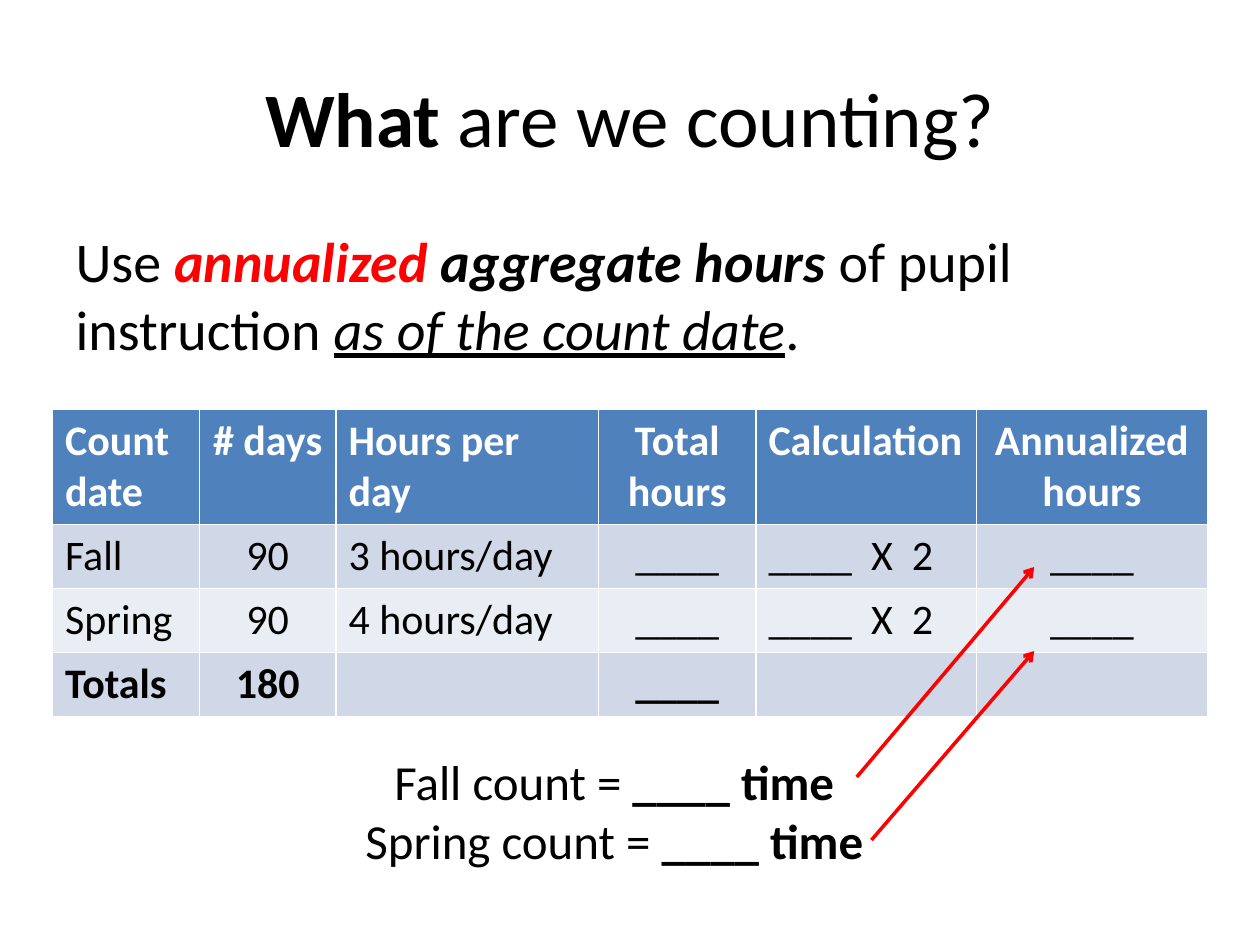
import pptx
import pptx.util
import pptx.dml.color
import pptx.enum.shapes
import pptx.enum.text
import pptx.oxml

Pt = pptx.util.Pt
RGBColor = pptx.dml.color.RGBColor
CENTER = pptx.enum.text.PP_ALIGN.CENTER
LEFT = pptx.enum.text.PP_ALIGN.LEFT

BLACK = RGBColor(0x00, 0x00, 0x00)
WHITE = RGBColor(0xFF, 0xFF, 0xFF)
RED = RGBColor(0xFF, 0x00, 0x00)
HEADER_BLUE = RGBColor(0x4F, 0x81, 0xBD)
BAND_DARK = RGBColor(0xD0, 0xD8, 0xE8)
BAND_LIGHT = RGBColor(0xE9, 0xED, 0xF4)

NAMESPACE = 'xmlns:a="http://schemas.openxmlformats.org/drawingml/2006/main"'
BLANK = "____"
COLUMN_WIDTHS = [84, 78, 150, 90, 126, 132]
COLUMN_ALIGNS = [LEFT, CENTER, LEFT, CENTER, LEFT, CENTER]
ROW_HEIGHTS = [65.5, 36.5, 36.5, 36.5]
COUNT_ROWS = [
    ["Count date", "# days", "Hours per day", "Total hours", "Calculation", "Annualized hours"],
    ["Fall", "90", "3 hours/day", BLANK, BLANK + "  X  2", BLANK],
    ["Spring", "90", "4 hours/day", BLANK, BLANK + "  X  2", BLANK],
    ["Totals", "180", "", BLANK, "", ""],
]


def xml(tag):
    return pptx.oxml.parse_xml(tag.replace(" ", f" {NAMESPACE} ", 1))


def place(shape, box):
    shape.left, shape.top, shape.width, shape.height = [Pt(value) for value in box]


def style(font, size, color=BLACK, bold=False, italic=False, underline=False):
    font.name, font.size = "Calibri", Pt(size)
    font.bold, font.italic, font.underline = bold, italic, underline
    font.color.rgb = color


def add_spans(para, size, spans):
    """Each span is a text and its differences from the plain style."""
    for text, look in spans:
        span = para.add_run()
        span.text = text
        style(span.font, size, **look)


def fill_title(page, box):
    title = page.shapes.title
    place(title, box)
    para = title.text_frame.paragraphs[0]
    para.alignment = CENTER
    add_spans(para, 44, [("What", {"bold": True}), (" are we counting?", {})])


def fill_body(page, box):
    body = page.placeholders[1]
    place(body, box)
    para = body.text_frame.paragraphs[0]
    add_spans(para, 32, [
        ("Use ", {}),
        ("annualized", {"color": RED, "bold": True, "italic": True}),
        (" aggregate hours ", {"bold": True, "italic": True}),
        ("of pupil instruction ", {}),
        ("as of the count date", {"italic": True, "underline": True}),
        (".", {}),
    ])
    # No bullet and no hanging indent
    properties = para._p.get_or_add_pPr()
    properties.set("marL", "0")
    properties.set("indent", "0")
    properties.append(xml("<a:buNone />"))


def add_count_table(page, box):
    frame = page.shapes.add_table(len(COUNT_ROWS), len(COLUMN_WIDTHS), *[Pt(value) for value in box])
    table = frame.table
    for column, width in zip(table.columns, COLUMN_WIDTHS):
        column.width = Pt(width)
    for row, height in zip(table.rows, ROW_HEIGHTS):
        row.height = Pt(height)
    last = len(COUNT_ROWS) - 1
    for row_index, texts in enumerate(COUNT_ROWS):
        header = row_index == 0
        band = HEADER_BLUE if header else BAND_DARK if row_index % 2 else BAND_LIGHT
        for column_index, text in enumerate(texts):
            cell = table.cell(row_index, column_index)
            cell.fill.solid()
            cell.fill.fore_color.rgb = band
            if text:
                para = cell.text_frame.paragraphs[0]
                para.text = text
                para.alignment = COLUMN_ALIGNS[column_index]
                style(para.runs[0].font, 24, WHITE if header else BLACK, row_index in (0, last))


def add_count_notes(page, box):
    notes = page.shapes.add_textbox(*[Pt(value) for value in box])
    frame = notes.text_frame
    frame.word_wrap = True
    for index, season in enumerate(["Fall", "Spring"]):
        para = frame.add_paragraph() if index else frame.paragraphs[0]
        para.alignment = CENTER
        add_spans(para, 28, [(f"{season} count = ", {}), (BLANK + " time", {"bold": True})])


def add_arrow(page, start, end):
    arrow = page.shapes.add_connector(
        pptx.enum.shapes.MSO_CONNECTOR.STRAIGHT, *[Pt(value) for value in start + end])
    arrow.line.color.rgb = RED
    arrow.line.width = Pt(2)
    arrow.line._get_or_add_ln().append(xml('<a:tailEnd type="arrow"/>'))
    arrow._element.spPr.append(xml("<a:effectLst />"))


def build_count_page(deck):
    page = deck.slides.add_slide(deck.slide_layouts[1])
    fill_title(page, (36, 21.6, 648, 90))
    fill_body(page, (36, 126, 648, 96))
    add_count_table(page, (30, 234, sum(COLUMN_WIDTHS), sum(ROW_HEIGHTS)))
    add_count_notes(page, (180, 426, 342, 75))
    # Arrows from each note to its annualized hours
    add_arrow(page, (489.6, 444), (591, 324))
    add_arrow(page, (498, 480), (591, 372))


def main():
    deck = pptx.Presentation()
    deck.slide_width, deck.slide_height = Pt(720), Pt(540)
    build_count_page(deck)
    deck.save("out.pptx")


if __name__ == "__main__":
    main()
